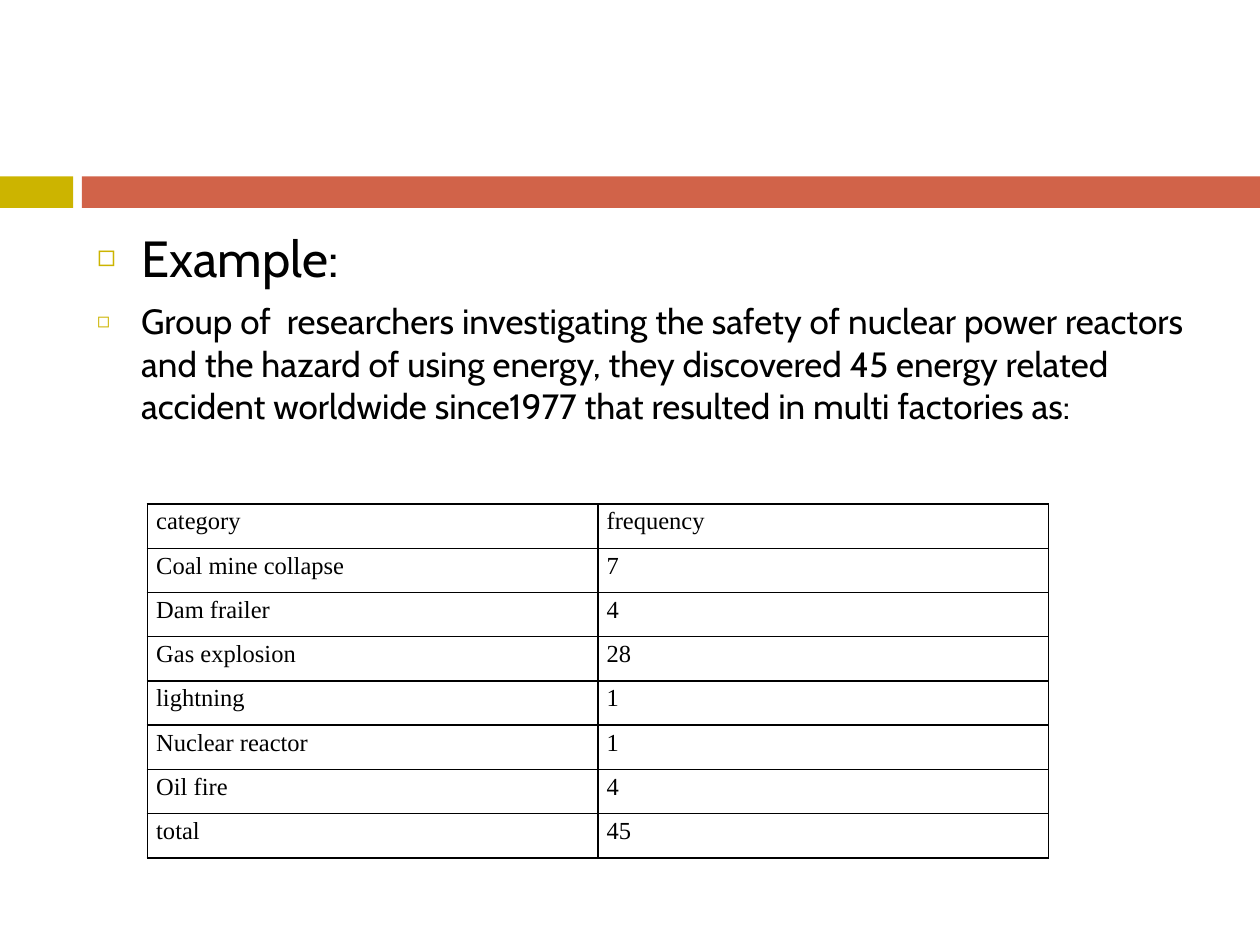
import pptx
import pptx.dml.color
import pptx.enum.shapes
import pptx.enum.text
import pptx.oxml
import pptx.oxml.ns
import pptx.util
from pptx.util import Inches

NS = pptx.oxml.ns.nsdecls("a")


def color(value):
    return pptx.dml.color.RGBColor.from_string(value)


def set_all(obj, values):
    for name, value in values.items():
        setattr(obj, name, value)


class Deck:
    GOLD, RED, BLACK = "CCB400", "D16349", "000000"
    BODY_FONT, TABLE_FONT = "Cabin", "Times New Roman"

    def __init__(self, width, height):
        self.prs = pptx.Presentation()
        set_all(self.prs, {"slide_width": Inches(width), "slide_height": Inches(height)})
        self.s = self.prs.slides.add_slide(self.prs.slide_layouts[1])
        title = self.s.shapes.title.element
        title.getparent().remove(title)

    def run(self, p, text, font, size):
        r = p.add_run()
        r.text = text
        set_all(r.font, {"name": font, "size": pptx.util.Pt(size), "bold": False})
        r.font.color.rgb = color(self.BLACK)

    def bar(self, left, top, width, height, fill):
        sp = self.s.shapes.add_shape(
            pptx.enum.shapes.MSO_SHAPE.RECTANGLE, *map(Inches, (left, top, width, height)))
        sp.shadow.inherit = False
        sp.fill.solid()
        sp.fill.fore_color.rgb = color(fill)
        sp.line.fill.background()

    def bullet(self, p):
        pPr = p._p.get_or_add_pPr()
        pPr.set("marL", str(Inches(0.35)))
        pPr.set("indent", str(-Inches(0.35)))
        for xml in (f'<a:buClr {NS}><a:srgbClr val="{self.GOLD}"/></a:buClr>',
                    f'<a:buSzPct {NS} val="60000"/>',
                    f'<a:buChar {NS} char="◻"/>'):
            pPr.append(pptx.oxml.parse_xml(xml))

    def body(self, left, top, width, height, items):
        sp = self.s.placeholders[1]
        set_all(sp, {"left": Inches(left), "top": Inches(top),
                     "width": Inches(width), "height": Inches(height)})
        tf = sp.text_frame
        set_all(tf, {"word_wrap": True, "auto_size": pptx.enum.text.MSO_AUTO_SIZE.NONE,
                     "vertical_anchor": pptx.enum.text.MSO_ANCHOR.TOP})
        for i, (text, size) in enumerate(items):
            p = tf.add_paragraph() if i else tf.paragraphs[0]
            p.space_before = pptx.util.Pt(7)
            self.bullet(p)
            self.run(p, text, self.BODY_FONT, size)

    def borders(self, cell):
        tcPr = cell._tc.get_or_add_tcPr()
        for side in "LRTB":
            tcPr.append(pptx.oxml.parse_xml(
                f'<a:ln{side} {NS} w="{pptx.util.Pt(1)}"><a:solidFill>'
                f'<a:srgbClr val="{self.BLACK}"/></a:solidFill></a:ln{side}>'))

    def table(self, left, top, width, height, rows):
        tbl = self.s.shapes.add_table(
            len(rows), len(rows[0]), *map(Inches, (left, top, width, height))).table
        set_all(tbl, {"first_row": False, "horz_banding": False})
        for i, row in enumerate(rows):
            for j, text in enumerate(row):
                cell = tbl.cell(i, j)
                set_all(cell, {"margin_left": Inches(0.07), "margin_right": Inches(0.07),
                               "margin_top": 0, "margin_bottom": 0})
                self.borders(cell)
                cell.fill.background()
                p = cell.text_frame.paragraphs[0]
                p.line_spacing = 1.15
                self.run(p, text, self.TABLE_FONT, 14)


def main():
    deck = Deck(10, 7.5)
    deck.bar(0, 1.4, 0.58, 0.25, deck.GOLD)
    deck.bar(0.65, 1.4, 9.35, 0.25, deck.RED)
    deck.body(0.67, 1.75, 8.92, 4.92, [
        ("Example:", 29),
        ("Group of  researchers investigating the safety of nuclear power reactors "
         "and the hazard of using energy, they discovered 45 energy related accident "
         "worldwide since1977 that resulted in multi factories as:", 20),
    ])
    deck.table(1.17, 4, 7.15, 2.81, [
        ("category", "frequency"),
        ("Coal mine collapse", "7"),
        ("Dam frailer", "4"),
        ("Gas explosion", "28"),
        ("lightning", "1"),
        ("Nuclear reactor", "1"),
        ("Oil fire", "4"),
        ("total", "45"),
    ])
    deck.prs.save("out.pptx")


if __name__ == "__main__":
    main()
